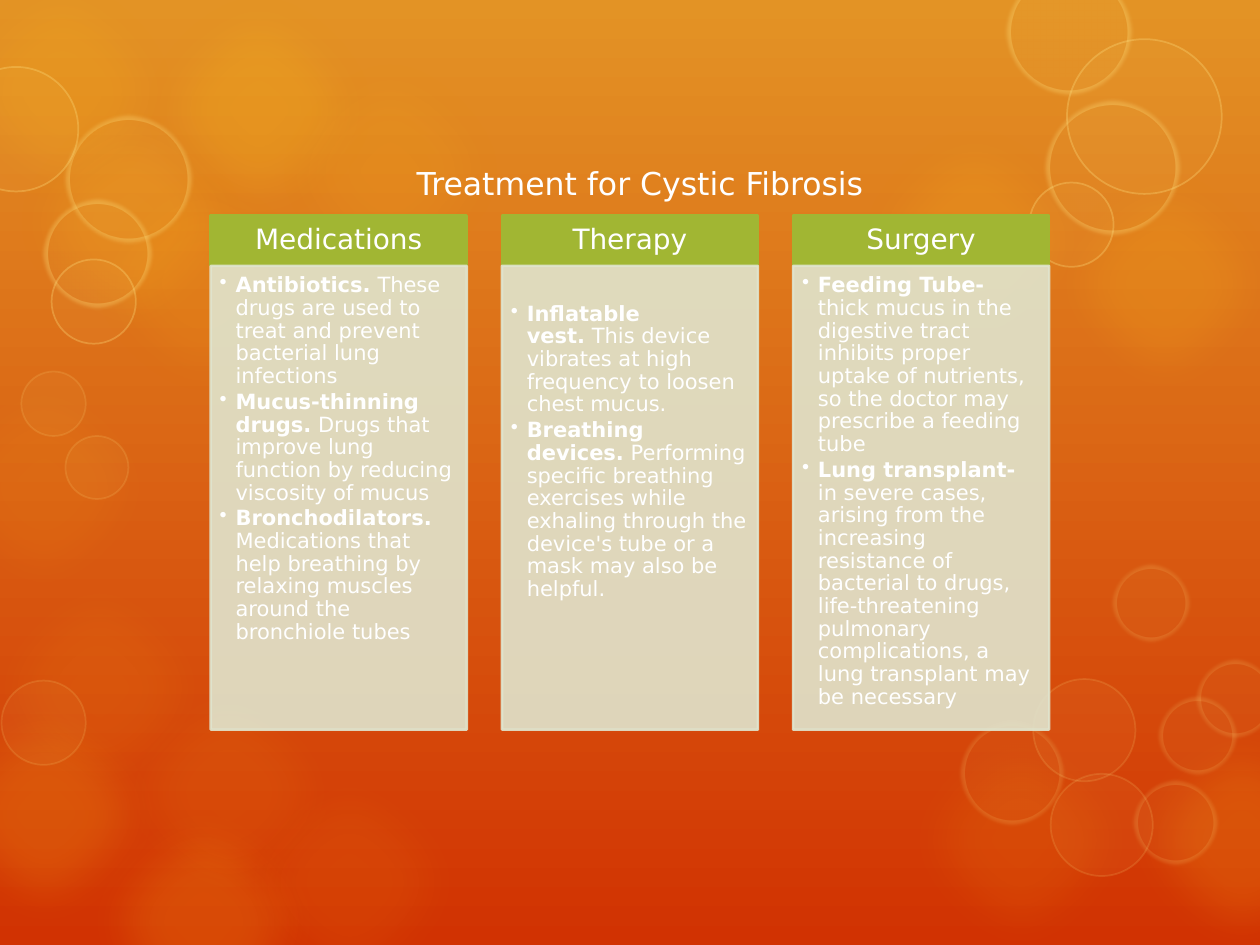
from pptx import Presentation
from pptx.dml.color import RGBColor
from pptx.enum.shapes import MSO_SHAPE
from pptx.enum.text import MSO_ANCHOR, MSO_AUTO_SIZE, PP_ALIGN
from pptx.oxml.ns import qn
from pptx.util import Cm, Pt

OVAL, RECTANGLE = MSO_SHAPE.OVAL, MSO_SHAPE.RECTANGLE
TOP, MIDDLE = MSO_ANCHOR.TOP, MSO_ANCHOR.MIDDLE
LEFT, CENTER = PP_ALIGN.LEFT, PP_ALIGN.CENTER
GROW = MSO_AUTO_SIZE.SHAPE_TO_FIT_TEXT

FONT = "DejaVu Sans"
WHITE, GREEN, SAGE = "FFFFFF", "A1B633", "E0E5CE"
AMBER, YELLOW = "FDC61B", "FFE281"
NO_BREAK_SPACE = chr(160)

# left, top in cm, opacity in percent
GLOW_SIZE = 5.31
GLOWS = [
    (-0.65, 11.22, 8), (1.45, 3.05, 10), (5.21, 0.79, 10), (1.45, 15.92, 16),
    (-1.41, -0.83, 14), (2.57, -0.46, 20), (0, 1.83, 15), (20.83, 3.05, 15),
    (22.38, 14.27, 16), (-1.74, 13.74, 16), (1.96, 13.31, 8), (16.99, 2.18, 15),
    (17.93, 14.27, 10), (4.39, 15.14, 8), (-1.77, 7.16, 8),
]
# left, top, diameter in cm
SOFT_RINGS = [
    (1.32, 2.34, 2.54), (0.89, 4.04, 2.16), (20.29, -0.61, 2.51), (21.08, 2.03, 2.69),
    (19.38, 14.55, 2.06), (22.86, 15.75, 1.68), (22.43, 11.38, 1.55), (23.37, 14.05, 1.55),
    (24.13, 13.31, 1.55),
]
SHARP_RINGS = [
    (0.03, 13.72, 1.7), (-0.93, 1.35, 2.51), (1.04, 5.23, 1.7), (21.51, 0.79, 3.12),
    (20.75, 3.68, 1.7), (21.18, 15.6, 2.06), (20.83, 13.69, 2.06), (0.43, 7.49, 1.3),
    (1.32, 8.79, 1.27),
]

# heading, top inset of the list in cm, (term, description) pairs
TREATMENTS = [
    ("Medications", 0.18, [
        ("Antibiotics.", "These drugs are used to treat and prevent bacterial lung infections"),
        ("Mucus-thinning drugs.", "Drugs that improve lung function by reducing viscosity of mucus"),
        ("Bronchodilators.", "Medications that help breathing by relaxing muscles around the "
                             "bronchiole tubes"),
    ]),
    ("Therapy", 0.75, [
        ("Inflatable vest.", "This device vibrates at high frequency to loosen chest mucus."),
        ("Breathing devices.", "Performing specific breathing exercises while exhaling through "
                               "the device's tube or a mask may also be helpful."),
    ]),
    ("Surgery", 0.18, [
        ("Feeding Tube-", "thick mucus in the digestive tract inhibits proper uptake of "
                          "nutrients, so the doctor may prescribe a feeding tube"),
        ("Lung transplant-", "in severe cases, arising from the increasing resistance of "
                             "bacterial to drugs, life-threatening pulmonary complications, "
                             "a lung transplant may be necessary"),
    ]),
]


def rgb(value):
    return RGBColor.from_string(value)


def add_child(parent, tag, **attributes):
    child = parent.makeelement(qn(tag), attributes)
    parent.append(child)
    return child


def paint(shape, fill, fill_opacity=100, line=None, width=1, line_opacity=100):
    """Give a shape its fill and outline; opacities in percent."""
    shape.shadow.inherit = False
    shape.fill.solid()
    shape.fill.fore_color.rgb = rgb(fill)
    if line:
        shape.line.color.rgb = rgb(line)
        shape.line.width = Pt(width)
    else:
        shape.line.fill.background()
    for query, opacity in (("./p:spPr/a:solidFill/a:srgbClr", fill_opacity),
                           ("./p:spPr/a:ln/a:solidFill/a:srgbClr", line_opacity)):
        for color in shape.element.xpath(query):
            if opacity < 100:
                add_child(color, "a:alpha", val=str(opacity * 1000))


def add_bubble(slide, left, top, size, soft_edge=0, **style):
    bubble = slide.shapes.add_shape(OVAL, Cm(left), Cm(top), Cm(size), Cm(size))
    paint(bubble, **style)
    if soft_edge:
        effects = bubble.element.spPr.find(qn("a:effectLst"))
        add_child(effects, "a:softEdge", rad=str(Pt(soft_edge)))


def add_backdrop(slide):
    # Gradient from top to bottom
    fill = slide.background.fill
    fill.gradient()
    fill.gradient_angle = 270
    for stop, color, position in zip(fill.gradient_stops, ("E39325", "D13202"), (0, 1)):
        stop.color.rgb = rgb(color)
        stop.position = position

    # Blurred glows
    for left, top, opacity in GLOWS:
        add_bubble(slide, left, top, GLOW_SIZE, soft_edge=25, fill=AMBER, fill_opacity=opacity)

    # Rings, brighter near the top
    for rings, width, soft_edge in ((SOFT_RINGS, 5, 2.5), (SHARP_RINGS, 1, 0)):
        for left, top, size in rings:
            add_bubble(slide, left, top, size, soft_edge=soft_edge, fill=YELLOW, fill_opacity=5,
                       line=YELLOW, width=width, line_opacity=30 if top < 7 else 15)


def style_paragraph(para, size, align):
    para.alignment = align
    para.font.name = FONT
    para.font.size = Pt(size)
    para.font.color.rgb = rgb(WHITE)


def add_title(slide, left, top, width, height):
    title = slide.shapes.title
    title.left, title.top, title.width, title.height = Cm(left), Cm(top), Cm(width), Cm(height)
    frame = title.text_frame
    frame.text = "Treatment for Cystic Fibrosis"
    frame.word_wrap = True
    frame.auto_size = GROW
    frame.vertical_anchor = TOP
    style_paragraph(frame.paragraphs[0], 18, CENTER)
    title.element.getparent().append(title.element)  # in front of the bubbles


def add_panel(slide, box, insets, anchor, **style):
    panel = slide.shapes.add_shape(RECTANGLE, *(Cm(length) for length in box))
    paint(panel, width=1.5, **style)
    frame = panel.text_frame
    frame.word_wrap = True
    frame.vertical_anchor = anchor
    (frame.margin_left, frame.margin_top,
     frame.margin_right, frame.margin_bottom) = (Cm(inset) for inset in insets)
    return frame


def add_column(slide, left, top, width, height, heading, list_inset, entries):
    # Heading bar
    bar = 1.02
    frame = add_panel(slide, (left, top, width, bar), (0.3, 0.18, 0.3, 0.18), MIDDLE,
                      fill=GREEN, line=GREEN)
    frame.text = heading
    frame.paragraphs[0].line_spacing = 0.9
    style_paragraph(frame.paragraphs[0], 16, CENTER)

    # Bulleted list
    frame = add_panel(slide, (left, top + bar, width, height - bar),
                      (0.18, list_inset, 0.23, 0.25), TOP,
                      fill=SAGE, fill_opacity=90, line=SAGE, line_opacity=90)
    for index, (term, description) in enumerate(entries):
        para = frame.add_paragraph() if index else frame.paragraphs[0]
        style_paragraph(para, 12, LEFT)
        para.line_spacing = 0.9
        para.space_after = Pt(1.8)
        properties = para._p.get_or_add_pPr()
        properties.set("marL", str(Cm(0.32)))
        properties.set("indent", str(-Cm(0.32)))
        bullet = properties.makeelement(qn("a:buChar"), {"char": "•"})
        properties.find(qn("a:defRPr")).addprevious(bullet)
        gap = " " if term.endswith("-") else NO_BREAK_SPACE
        for text, bold in ((term, True), (gap + description, False)):
            span = para.add_run()
            span.text = text
            span.font.bold = bold


def main():
    deck = Presentation()
    deck.slide_width, deck.slide_height = Cm(25.4), Cm(19.05)
    slide = deck.slides.add_slide(deck.slide_layouts[5])
    add_backdrop(slide)
    for index, treatment in enumerate(TREATMENTS):
        add_column(slide, 4.25 + index * 5.87, 4.34, 5.16, 10.37, *treatment)
    add_title(slide, 7.19, 3.18, 11.43, 1.02)
    deck.save("out.pptx")


if __name__ == "__main__":
    main()
